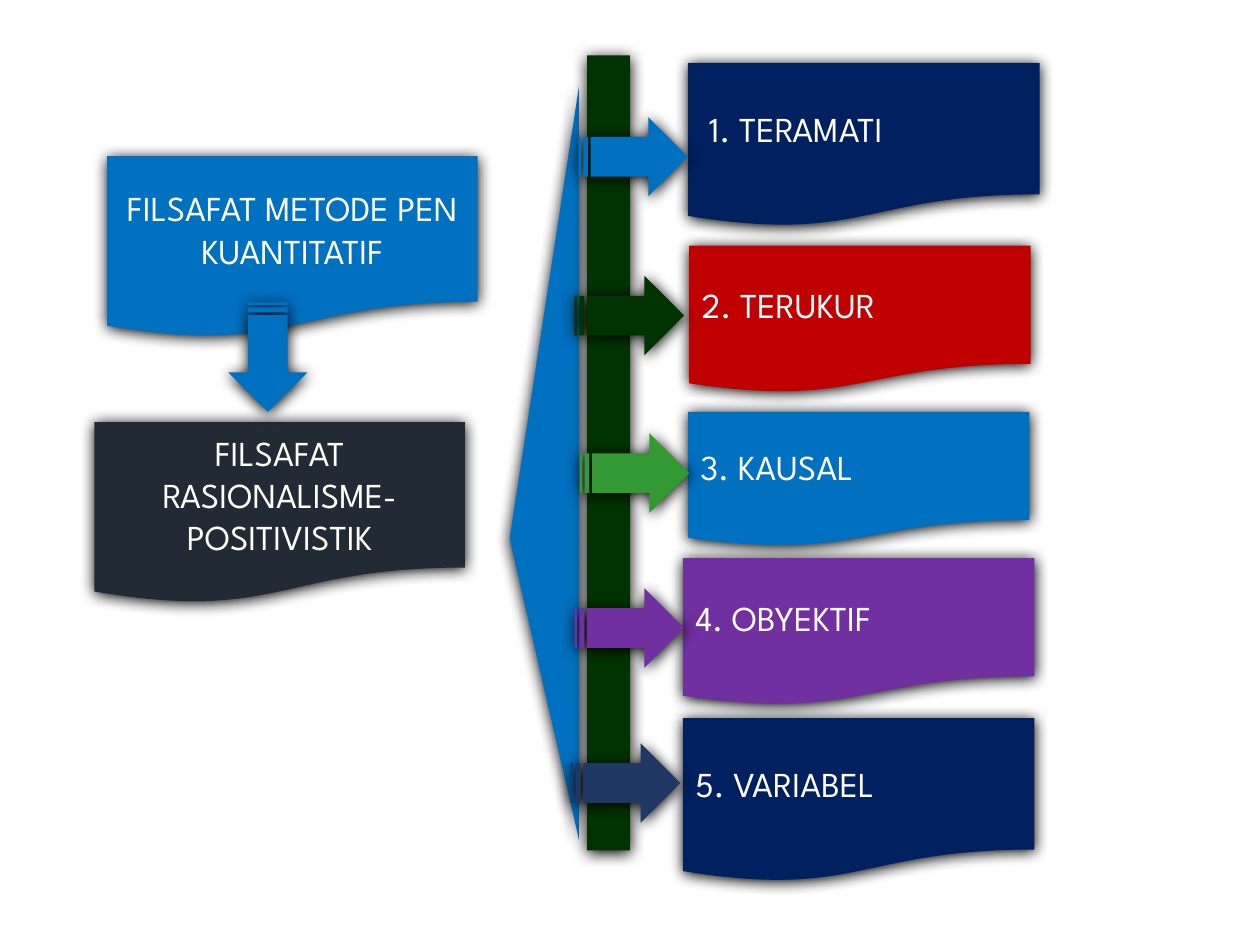
from lxml.etree import SubElement
from pptx import Presentation
from pptx.dml.color import RGBColor
from pptx.enum.shapes import MSO_SHAPE
from pptx.enum.text import MSO_ANCHOR, PP_ALIGN
from pptx.oxml.ns import qn
from pptx.util import Inches, Pt

FONT = "League Spartan"
BLUE, NAVY, GREEN, PURPLE = "0070C0", "002060", "003300", "7030A0"

TRAITS = [
    (" 1. TERAMATI", (5.46, 0.5, 2.79, 1.3), NAVY, (4.59, 0.93), BLUE),
    ("2. TERUKUR", (5.47, 1.95, 2.71, 1.17), "C00000", (4.56, 2.19), GREEN),
    ("3. KAUSAL", (5.46, 3.27, 2.71, 1.07), BLUE, (4.6, 3.44), "339933"),
    ("4. OBYEKTIF", (5.42, 4.43, 2.79, 1.17), PURPLE, (4.56, 4.67), PURPLE),
    ("5. VARIABEL", (5.42, 5.7, 2.79, 1.3), NAVY, (4.53, 5.9), "203864"),
]


def color(value):
    return RGBColor.from_string(value)


def add_shadow(shape):
    shape.shadow.inherit = False
    effects = shape._element.spPr.find(qn("a:effectLst"))
    shadow = SubElement(effects, qn("a:outerShdw"), blurRad=str(Pt(8.5)),
                        dist=str(Pt(1)), dir="5400000", algn="t", rotWithShape="0")
    SubElement(shadow, qn("a:srgbClr"), val="000000")


def add_block(page, kind, frame, fill, rotation=0):
    shape = page.shapes.add_shape(kind, *map(Inches, frame))
    shape.rotation = rotation
    shape.fill.solid()
    shape.fill.fore_color.rgb = color(fill)
    shape.line.fill.background()
    add_shadow(shape)
    return shape


def add_document(page, text, frame, fill, align=PP_ALIGN.LEFT):
    box = add_block(page, MSO_SHAPE.FLOWCHART_DOCUMENT, frame, fill)
    box.text_frame.word_wrap = True
    box.text_frame.vertical_anchor = MSO_ANCHOR.MIDDLE
    para = box.text_frame.paragraphs[0]
    para.alignment = align
    span = para.add_run()
    span.text = text
    span.font.name = FONT
    span.font.size = Pt(20)
    span.font.color.rgb = color("FFFFFF")


def add_arrow(page, left, top, fill, rotation=0):
    add_block(page, MSO_SHAPE.STRIPED_RIGHT_ARROW, (left, top, 0.87, 0.63), fill, rotation)


def main():
    deck = Presentation()
    deck.slide_width, deck.slide_height = Inches(10), Inches(7.5)
    page = deck.slides.add_slide(deck.slide_layouts[6])

    add_document(page, "FILSAFAT METODE PEN KUANTITATIF",
                 (0.85, 1.24, 2.94, 1.44), BLUE, PP_ALIGN.CENTER)
    add_document(page, "FILSAFAT RASIONALISME- POSITIVISTIK",
                 (0.75, 3.35, 2.94, 1.44), "222A35", PP_ALIGN.CENTER)
    add_arrow(page, 1.69, 2.52, BLUE, 90)

    for text, frame, fill, _, _ in TRAITS:
        add_document(page, text, frame, fill)

    wedge = add_block(page, MSO_SHAPE.ISOSCELES_TRIANGLE, (1.33, 3.4, 5.98, 0.55), BLUE, 270)
    wedge.adjustments[0] = 0.4
    add_block(page, MSO_SHAPE.RECTANGLE, (4.66, 0.44, 0.34, 6.31), GREEN)

    for _, _, _, corner, fill in TRAITS:
        add_arrow(page, *corner, fill)

    deck.save("out.pptx")


if __name__ == "__main__":
    main()
